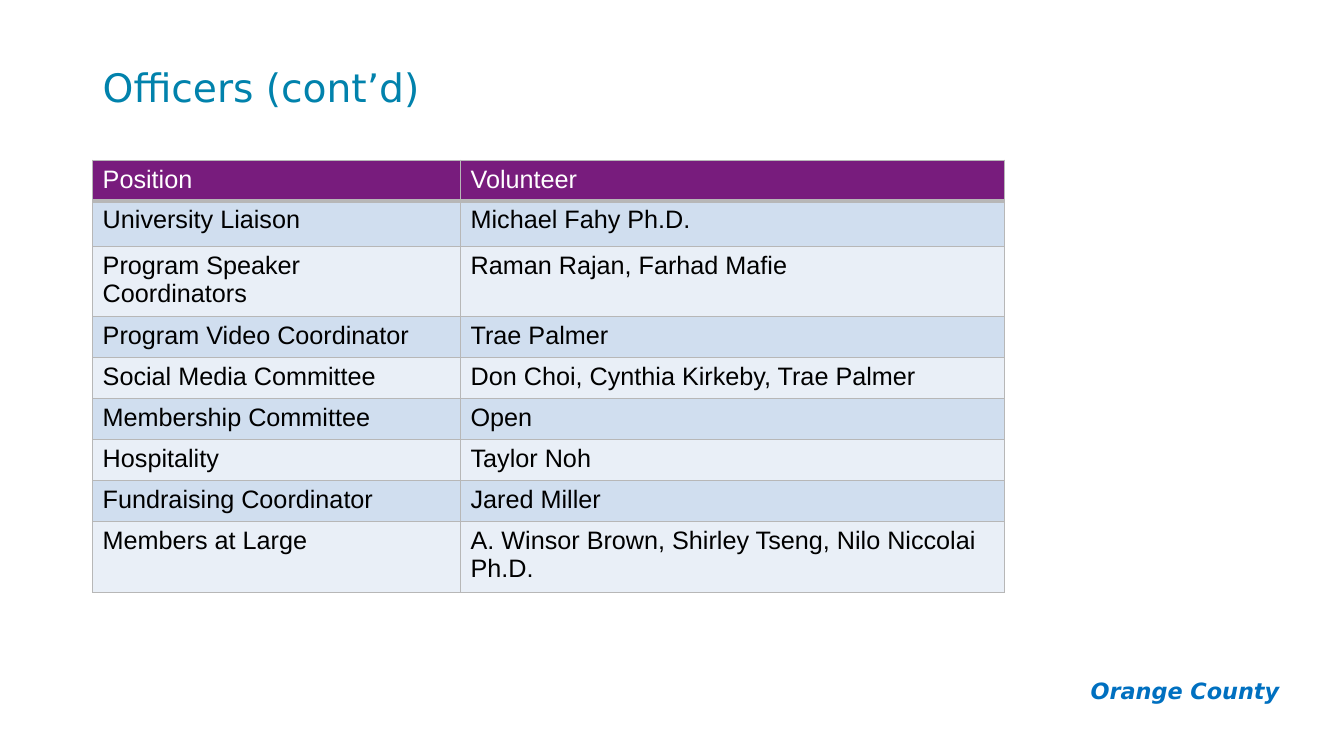
from lxml.etree import SubElement
from pptx import Presentation
from pptx.dml.color import RGBColor
from pptx.enum.text import MSO_ANCHOR as ANCHOR, MSO_AUTO_SIZE as FIT, PP_ALIGN as ALIGN
from pptx.oxml.ns import qn
from pptx.util import Pt

OFFICERS = [
    ("Position", "Volunteer"),
    ("University Liaison", "Michael Fahy Ph.D."),
    ("Program Speaker Coordinators", "Raman Rajan, Farhad Mafie"),
    ("Program Video Coordinator", "Trae Palmer"),
    ("Social Media Committee", "Don Choi, Cynthia Kirkeby, Trae Palmer"),
    ("Membership Committee", "Open"),
    ("Hospitality", "Taylor Noh"),
    ("Fundraising Coordinator", "Jared Miller"),
    ("Members at Large", "A. Winsor Brown, Shirley Tseng, Nilo Niccolai Ph.D."),
]
COL_WIDTHS = [262.8, 388.8]
ROW_HEIGHTS = [26, 32.6, 32.6] + [29.3] * 6
HEADER, BANDS, BORDER = "781C7D", ("E9EFF7", "D0DEEF"), "B7B7B7"
TITLE = {"size": Pt(28), "name": "DejaVu Sans", "bold": False}
CHAPTER = {"size": Pt(16), "name": "DejaVu Sans", "bold": True, "italic": True}
CELL = {"size": Pt(18), "name": "Arial", "bold": False}


def rgb(value):
    """Turn a hex string into a colour."""
    return RGBColor.from_string(value)


def write(tf, text, fmt, color, align=ALIGN.LEFT):
    """Put one formatted run in a text frame and return its paragraph."""
    p = tf.paragraphs[0]
    p.alignment = align
    r = p.add_run()
    r.text = text
    for name, value in fmt.items():
        setattr(r.font, name, value)
    r.font.color.rgb = rgb(color)
    return p


def set_insets(tf, x, y):
    """Set the horizontal and vertical insets of a text frame."""
    tf.margin_left = tf.margin_right = Pt(x)
    tf.margin_top = tf.margin_bottom = Pt(y)


def add_borders(cell, widths):
    """Draw the four borders of a cell, given widths by side."""
    tcPr = cell._tc.get_or_add_tcPr()
    for side, width in widths.items():
        ln = SubElement(tcPr, qn(f"a:ln{side}"), w=str(Pt(width)))
        fill = SubElement(ln, qn("a:solidFill"))
        SubElement(fill, qn("a:srgbClr"), val=BORDER)


def add_title(s, text, x, y, w, h):
    """Place and format the title placeholder."""
    sp = s.shapes.title
    sp.left, sp.top, sp.width, sp.height = Pt(x), Pt(y), Pt(w), Pt(h)
    tf = sp.text_frame
    tf.word_wrap, tf.auto_size, tf.vertical_anchor = True, FIT.NONE, ANCHOR.MIDDLE
    set_insets(tf, 7.2, 3.6)
    write(tf, text, TITLE, "0182AC").line_spacing = 0.9


def add_officers(s, x, y):
    """Add the banded table of officers."""
    frame = s.shapes.add_table(len(OFFICERS), len(COL_WIDTHS), Pt(x), Pt(y),
                               Pt(sum(COL_WIDTHS)), Pt(sum(ROW_HEIGHTS)))
    table = frame.table
    for col, width in zip(table.columns, COL_WIDTHS):
        col.width = Pt(width)
    for i, (row, height) in enumerate(zip(table.rows, ROW_HEIGHTS)):
        row.height = Pt(height)
        top, bottom = (3 if i == 1 else 1), (3 if i == 0 else 1)
        for cell, text in zip(row.cells, OFFICERS[i]):
            add_borders(cell, {"L": 1, "R": 1, "T": top, "B": bottom})
            cell.fill.solid()
            cell.fill.fore_color.rgb = rgb(BANDS[i % 2] if i else HEADER)
            set_insets(cell, 7.2, 3.6)
            write(cell.text_frame, text, CELL, "000000" if i else "FFFFFF")


def add_chapter(s, text, x, y, w, h):
    """Add the chapter name at the foot of the slide."""
    tf = s.shapes.add_textbox(Pt(x), Pt(y), Pt(w), Pt(h)).text_frame
    tf.word_wrap, tf.auto_size = True, FIT.SHAPE_TO_FIT_TEXT
    set_insets(tf, 7.2, 7.2)
    write(tf, text, CHAPTER, "0070C0", ALIGN.RIGHT)


def main():
    """Build and save the officers slide."""
    prs = Presentation()
    prs.slide_width, prs.slide_height = Pt(960), Pt(540)
    s = prs.slides.add_slide(prs.slide_layouts[5])
    add_chapter(s, "Orange County", 756.7, 476.6, 164.2, 33.8)
    add_title(s, "Officers (cont’d)", 66.2, 28.8, 828, 71.3)
    add_officers(s, 66.2, 114.5)
    prs.save("out.pptx")


if __name__ == "__main__":
    main()
